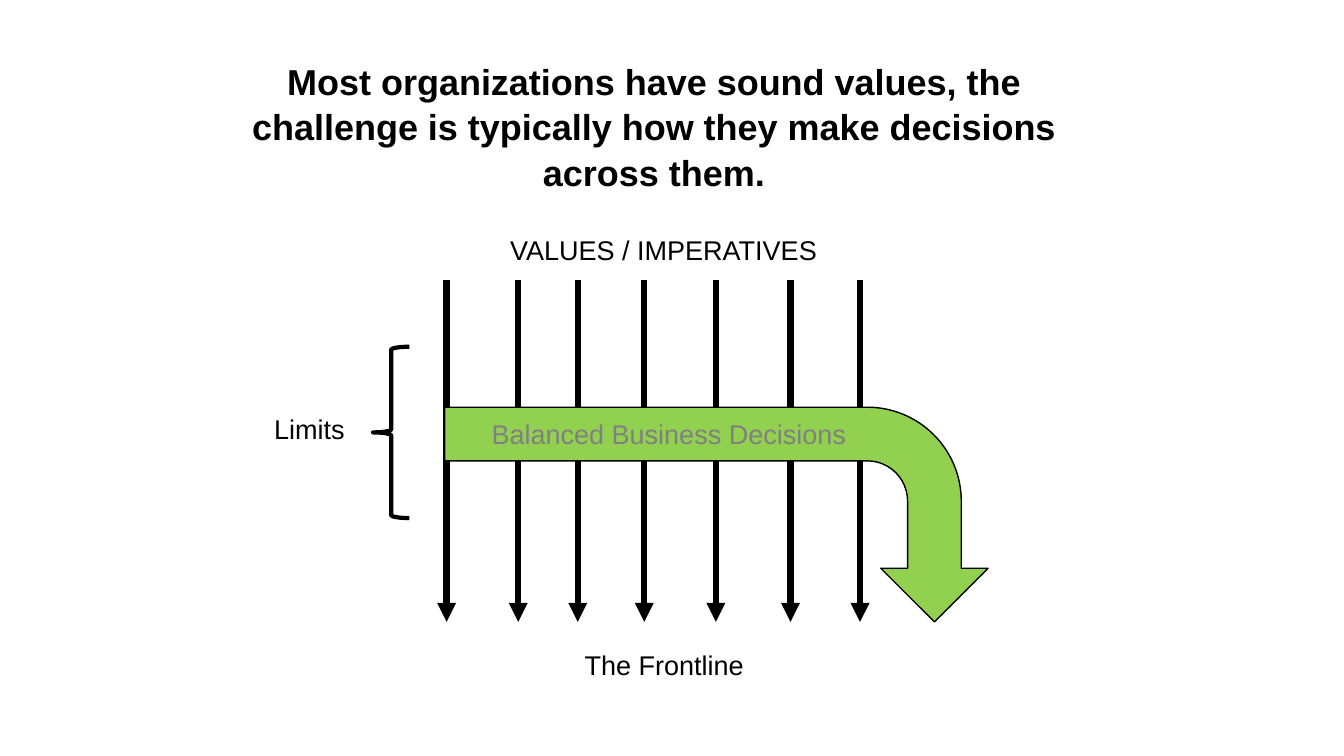
from lxml import etree
from pptx import Presentation
from pptx.dml.color import RGBColor
from pptx.enum import shapes, text
from pptx.oxml.ns import qn
from pptx.util import Inches, Pt

BLACK = RGBColor(0x00, 0x00, 0x00)
GRAY = RGBColor(0x80, 0x80, 0x80)
GREEN = RGBColor(0x92, 0xD0, 0x50)

VALUE_ARROWS_X = (4.43, 5.14, 5.73, 6.39, 7.1, 7.84, 8.53)
ARROWS_TOP, ARROWS_BOTTOM = 2.78, 6.17


def add_text(s, box, content, size=19.3, color=BLACK, bold=False,
             align=text.PP_ALIGN.LEFT, wrap=False):
    tf = s.shapes.add_textbox(*map(Inches, box)).text_frame
    tf.word_wrap = wrap
    p = tf.paragraphs[0]
    p.text = content
    p.alignment = align
    p.line_spacing = 1.05
    p.font.name = "Arial"
    p.font.size = Pt(size)
    p.font.bold = bold
    p.font.color.rgb = color


def add_down_arrow(s, x, top, bottom):
    arrow = s.shapes.add_connector(
        shapes.MSO_CONNECTOR.STRAIGHT,
        Inches(x), Inches(top), Inches(x), Inches(bottom))
    arrow.line.color.rgb = BLACK
    arrow.line.width = Pt(4.5)
    etree.SubElement(arrow.line._get_or_add_ln(), qn("a:tailEnd"), type="triangle")
    etree.SubElement(arrow._element.spPr, qn("a:effectLst"))


def add_outlined(s, kind, box, line_width, fill=None, rotation=0):
    sp = s.shapes.add_shape(kind, *map(Inches, box))
    sp.shadow.inherit = False
    sp.rotation = rotation
    sp.line.color.rgb = BLACK
    sp.line.width = Pt(line_width)
    if fill is None:
        sp.fill.background()
    else:
        sp.fill.solid()
        sp.fill.fore_color.rgb = fill


def main():
    prs = Presentation()
    prs.slide_width, prs.slide_height = Inches(13.33), Inches(7.5)
    s = prs.slides.add_slide(prs.slide_layouts[6])
    center = text.PP_ALIGN.CENTER

    add_text(s, (2.29, 0.52, 8.39, 1.4),
             "Most organizations have sound values, the challenge is "
             "typically how they make decisions across them.",
             size=25.7, bold=True, align=center, wrap=True)

    for x in VALUE_ARROWS_X:
        add_down_arrow(s, x, ARROWS_TOP, ARROWS_BOTTOM)

    add_outlined(s, shapes.MSO_SHAPE.LEFT_BRACE, (3.7, 3.44, 0.36, 1.7), 3)
    add_text(s, (2.62, 4.03, 0.91, 0.43), "Limits")
    add_text(s, (4.96, 2.25, 3.28, 0.43), "VALUES / IMPERATIVES")

    add_outlined(s, shapes.MSO_SHAPE.BENT_ARROW, (6.04, 2.41, 2.13, 5.39), 1,
                 fill=GREEN, rotation=90)
    add_text(s, (4.76, 4.08, 3.75, 0.43), "Balanced Business Decisions",
             color=GRAY, align=center)
    add_text(s, (5.7, 6.37, 1.8, 0.43), "The Frontline")

    prs.save("out.pptx")


if __name__ == "__main__":
    main()
